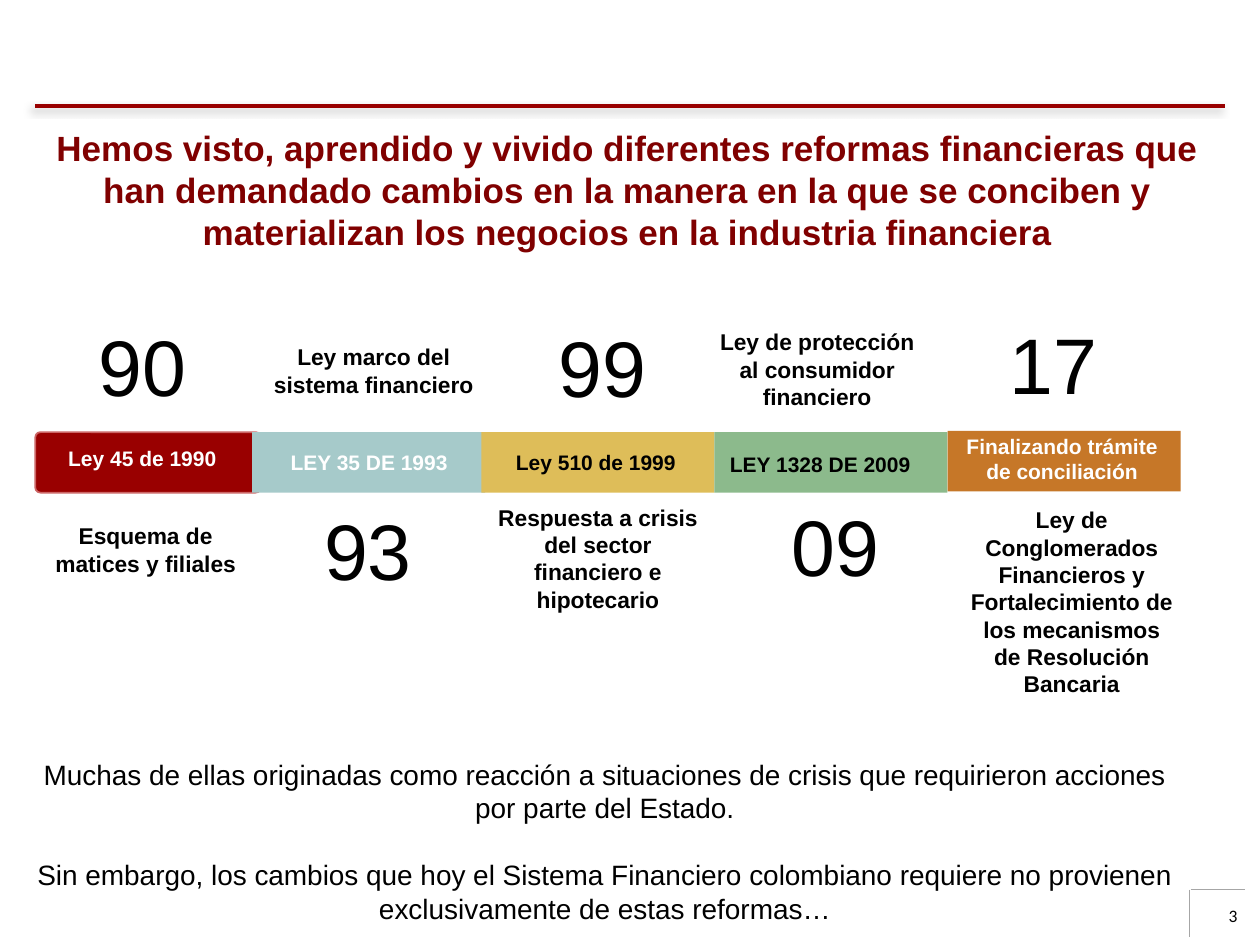
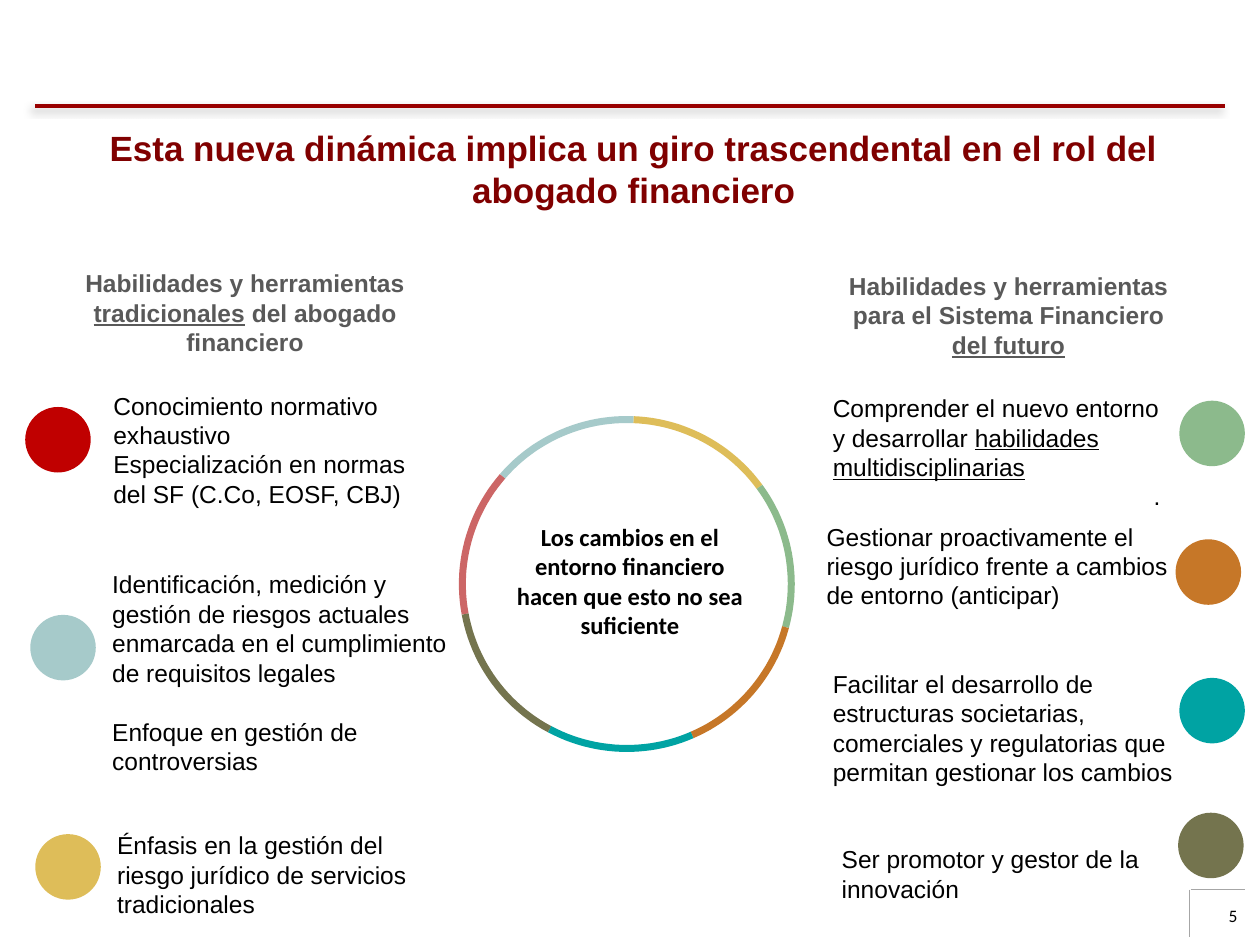
import math

import lxml.etree
import pptx
import pptx.dml.color
import pptx.enum.shapes
import pptx.enum.text
import pptx.oxml.ns
import pptx.util

PX = 9144  # one hundredth of an inch in EMU
SHAPES = pptx.enum.shapes.MSO_SHAPE
ALIGN = pptx.enum.text.PP_ALIGN
ANCHOR = pptx.enum.text.MSO_ANCHOR

WHITE, BLACK, GREY, DARK_GREY = "FFFFFF", "000000", "A6A6A6", "595959"
DARK_RED, MAROON, RED, ROSE = "990000", "800000", "C00000", "CC6666"
AQUA, GOLD, GREEN, ORANGE = "A6CACA", "DEBD59", "8CBA8C", "C67728"
TEAL, OLIVE = "00A3A3", "74744E"


def emu(*lengths):
    return [pptx.util.Emu(round(length * PX)) for length in lengths]


def rgb(color):
    return pptx.dml.color.RGBColor.from_string(color)


def write(shape, paragraphs, size, color=BLACK, bold=False, align=ALIGN.LEFT,
          font="Arial", insets=(0, 0), anchor=ANCHOR.TOP, gap=0):
    """Each paragraph is a list of (text, underlined) runs or plain strings."""
    frame = shape.text_frame
    frame.word_wrap = True
    frame.auto_size = pptx.enum.text.MSO_AUTO_SIZE.NONE
    frame.vertical_anchor = anchor
    frame.margin_left, frame.margin_top = emu(*insets)
    frame.margin_right, frame.margin_bottom = emu(*insets)
    for index, runs in enumerate(paragraphs):
        paragraph = frame.add_paragraph() if index else frame.paragraphs[0]
        paragraph.alignment = align
        if index and gap:
            paragraph.space_before = pptx.util.Pt(gap)
        for part in runs:
            if part == "\n":
                paragraph.add_line_break()
                continue
            text, underlined = (part, False) if isinstance(part, str) else part
            run = paragraph.add_run()
            run.text = text
            run.font.name = font
            run.font.size = pptx.util.Pt(size)
            run.font.bold = bold
            run.font.underline = underlined
            run.font.color.rgb = rgb(color)
    return frame


def add_text(slide, box, paragraphs, size, **style):
    shape = slide.shapes.add_textbox(*emu(*box))
    return write(shape, paragraphs, size, **style)


def add_filled(slide, kind, box, color):
    shape = slide.shapes.add_shape(kind, *emu(*box))
    shape.shadow.inherit = False
    shape.fill.solid()
    shape.fill.fore_color.rgb = rgb(color)
    shape.line.fill.background()
    return shape


def add_line(slide, start, end, color, width):
    """Return the effect list, which is empty, so that a shadow can be added."""
    line = slide.shapes.add_connector(
        pptx.enum.shapes.MSO_CONNECTOR.STRAIGHT, *emu(*start, *end))
    line.line.color.rgb = rgb(color)
    line.line.width = pptx.util.Pt(width)
    return lxml.etree.SubElement(line._element.spPr,
                                 pptx.oxml.ns.qn("a:effectLst"))


def add_shadow(effects):
    qn = pptx.oxml.ns.qn
    shadow = lxml.etree.SubElement(
        effects, qn("a:outerShdw"), blurRad=str(pptx.util.Pt(4)),
        dist=str(pptx.util.Pt(3)), dir=str(135 * 60000), rotWithShape="0")
    color = lxml.etree.SubElement(shadow, qn("a:srgbClr"), val=BLACK)
    lxml.etree.SubElement(color, qn("a:alpha"), val="40000")


def add_page(presentation, title, title_box, number):
    """Add a slide with its rule, page corner and title."""
    slide = presentation.slides.add_slide(presentation.slide_layouts[5])
    add_shadow(add_line(slide, (28, 84), (972, 84), DARK_RED, 2))
    add_line(slide, (945, 706), (988, 706), GREY, 0.25)
    add_line(slide, (944, 706), (944, 744), GREY, 0.25)
    add_text(slide, (930, 713, 62, 40), [[number]], 10, font="Calibri",
             align=ALIGN.RIGHT, insets=(10, 5))
    placeholder = slide.shapes.title
    placeholder.left, placeholder.top, placeholder.width, placeholder.height = (
        emu(*title_box))
    write(placeholder, [[title]], 20, color=MAROON, bold=True,
          align=ALIGN.CENTER, insets=(18, 9))
    return slide


# bar box, bar colour; law, text colour, law box; year, year box; note, note box.
# Boxes are relative to the left end and top of the timeline.
MILESTONES = [
    ((0, 0, 179, 48), DARK_RED, "Ley 45 de 1990", WHITE, (3, 11, 164, 20),
     "90", (2, -91, 166, 76),
     ["Esquema de matices y filiales"], (1, 69, 173, 48)),
    ((172, 0, 185, 48), AQUA, "LEY 35 DE 1993", WHITE, (183, 14, 164, 20),
     "93", (181, 55, 166, 76),
     ["Ley marco del sistema financiero"], (182, -73, 173, 48)),
    ((354, 0, 185, 48), GOLD, "Ley 510 de 1999", BLACK, (363, 14, 164, 20),
     "99", (367, -90, 166, 76),
     ["Respuesta a crisis del sector financiero e hipotecario"],
     (360, 54, 173, 92)),
    ((539, 0, 185, 48), GREEN, "LEY 1328 DE 2009", BLACK, (541, 15, 164, 20),
     "09", (552, 52, 166, 76),
     ["Ley de protección al consumidor financiero"], (534, -85, 173, 70)),
    ((724, -1, 185, 48), ORANGE, "Finalizando trámite de conciliación", WHITE,
     (733, 1, 164, 40), "17", (725, -92, 166, 76),
     ["Ley de Conglomerados Financieros y Fortalecimiento de los mecanismos",
      "\n", "de Resolución Bancaria"], (736, 56, 173, 157)),
]


def add_timeline(slide, left, top):
    def inside(box):
        return (left + box[0], top + box[1], *box[2:])

    for index, (bar_box, bar_color, *_) in enumerate(MILESTONES):
        kind = SHAPES.RECTANGLE if index else SHAPES.ROUNDED_RECTANGLE
        bar = add_filled(slide, kind, inside(bar_box), bar_color)
        if not index:
            bar.adjustments[0] = 0.085
            bar.line.color.rgb = rgb(ROSE)
            bar.line.width = pptx.util.Pt(1)
    for _, _, law, color, law_box, year, year_box, note, note_box in MILESTONES:
        add_text(slide, inside(law_box), [[law]], 12, color=color, bold=True,
                 align=ALIGN.CENTER)
        add_text(slide, inside(year_box), [[year]], 45, align=ALIGN.CENTER)
        add_text(slide, inside(note_box), [note], 13, bold=True,
                 align=ALIGN.CENTER, insets=(2, 2), anchor=ANCHOR.MIDDLE)


def add_reforms_slide(presentation):
    slide = add_page(
        presentation,
        "Hemos visto, aprendido y vivido diferentes reformas financieras que "
        "han demandado cambios en la manera en la que se conciben y "
        "materializan los negocios en la industria financiera",
        (22, 91, 952, 119), "3")
    add_timeline(slide, 28, 343)
    add_text(slide, (4, 592, 952, 153), [
        ["Muchas de ellas originadas como reacción a situaciones de crisis que "
         "requirieron acciones por parte del Estado."],
        ["Sin embargo, los cambios que hoy el Sistema Financiero colombiano "
         "requiere no provienen exclusivamente de estas reformas…"],
    ], 16, align=ALIGN.CENTER, insets=(18, 9), gap=19)


RING_COLORS = [ROSE, AQUA, GOLD, GREEN, ORANGE, TEAL, OLIVE]


def add_ring(slide, left, top, diameter, first_turn=259.5, pieces=24):
    """Turn one arc, which starts at the top, around a centred statement."""
    radius = diameter / 2
    step = 2 * math.pi / len(RING_COLORS)
    points = [emu(radius * math.sin(step * i / pieces),
                  -radius * math.cos(step * i / pieces))
              for i in range(pieces + 1)]
    middle_x = radius * math.sin(step) / 2
    middle_y = -radius * (1 + math.cos(step)) / 2
    for index, color in enumerate(RING_COLORS):
        turn = math.radians(first_turn) + index * step
        builder = slide.shapes.build_freeform(*points[0])
        builder.add_line_segments(points[1:], close=False)
        arc = builder.convert_to_shape()
        center_x, center_y = emu(
            left + radius + middle_x * math.cos(turn) - middle_y * math.sin(turn),
            top + radius + middle_x * math.sin(turn) + middle_y * math.cos(turn))
        arc.left = center_x - arc.width // 2
        arc.top = center_y - arc.height // 2
        arc.rotation = math.degrees(turn) % 360
        arc.shadow.inherit = False
        arc.fill.background()
        arc.line.color.rgb = rgb(color)
        arc.line.width = pptx.util.Pt(4)
    add_text(slide, (left + 33, top + 79, 200, 98),
             [["Los cambios en el entorno financiero hacen que esto no sea "
               "suficiente"]], 14, font="Calibri", bold=True,
             align=ALIGN.CENTER, insets=(2, 2), anchor=ANCHOR.MIDDLE)


# dot colour, dot position; text box, paragraphs, gap; relative to the column.
TRADITIONAL_SKILLS = [
    (RED, (0, 115), (70, 102, 247, 113),
     [["Conocimiento normativo exhaustivo"],
      ["Especialización en normas del SF (C.Co, EOSF, CBJ)"]], 0),
    (AQUA, (4, 280), (69, 244, 279, 210),
     [["Identificación, medición y gestión de riesgos actuales enmarcada en el "
       "cumplimiento de requisitos legales"],
      ["Enfoque en gestión de controversias"]], 17),
    (GOLD, (8, 454), (73, 451, 263, 71),
     [["Énfasis en la gestión del riesgo jurídico de servicios "
       "tradicionales"]], 0),
]
FUTURE_SKILLS = [
    (GREEN, (280, 108), (5, 102, 260, 106),
     [["Comprender el nuevo entorno y desarrollar ",
       ("habilidades multidisciplinarias", True)], ["."]], 0),
    (ORANGE, (277, 218), (0, 204, 275, 89),
     [["Gestionar proactivamente el riesgo jurídico frente a cambios de "
       "entorno (anticipar)"]], 0),
    (TEAL, (280, 328), (5, 321, 273, 141),
     [["Facilitar el desarrollo de estructuras societarias, comerciales y "
       "regulatorias que permitan gestionar los cambios"]], 0),
    (OLIVE, (279, 435), (12, 460, 252, 47),
     [["Ser promotor y gestor de la innovación"]], 0),
]


def add_skills(slide, left, top, heading, heading_box, skills, dot=52):
    def inside(box):
        return (left + box[0], top + box[1], *box[2:])

    add_text(slide, inside(heading_box), [heading], 14, color=DARK_GREY,
             bold=True, align=ALIGN.CENTER, insets=(10, 5))
    for color, position, text_box, paragraphs, gap in skills:
        add_filled(slide, SHAPES.OVAL, inside((*position, dot, dot)), color)
        frame = add_text(slide, inside(text_box), paragraphs, 14, gap=gap)
        if paragraphs[-1] == ["."]:
            frame.paragraphs[-1].alignment = ALIGN.RIGHT


def add_skills_slide(presentation):
    slide = add_page(
        presentation,
        "Esta nueva dinámica implica un giro trascendental en el rol del "
        "abogado financiero", (27, 91, 952, 85), "5")
    add_ring(slide, 367, 333, 261)
    add_skills(slide, 20, 208,
               ["Habilidades y herramientas ", ("tradicionales", True),
                " del abogado financiero"], (8, 0, 333, 81),
               TRADITIONAL_SKILLS)
    add_skills(slide, 656, 210,
               ["Habilidades y herramientas para el Sistema Financiero ",
                ("del futuro", True)], (3, 0, 283, 81), FUTURE_SKILLS)


def main():
    presentation = pptx.Presentation()
    presentation.slide_width, presentation.slide_height = emu(1000, 750)
    add_reforms_slide(presentation)
    add_skills_slide(presentation)
    presentation.save("out.pptx")


if __name__ == "__main__":
    main()
